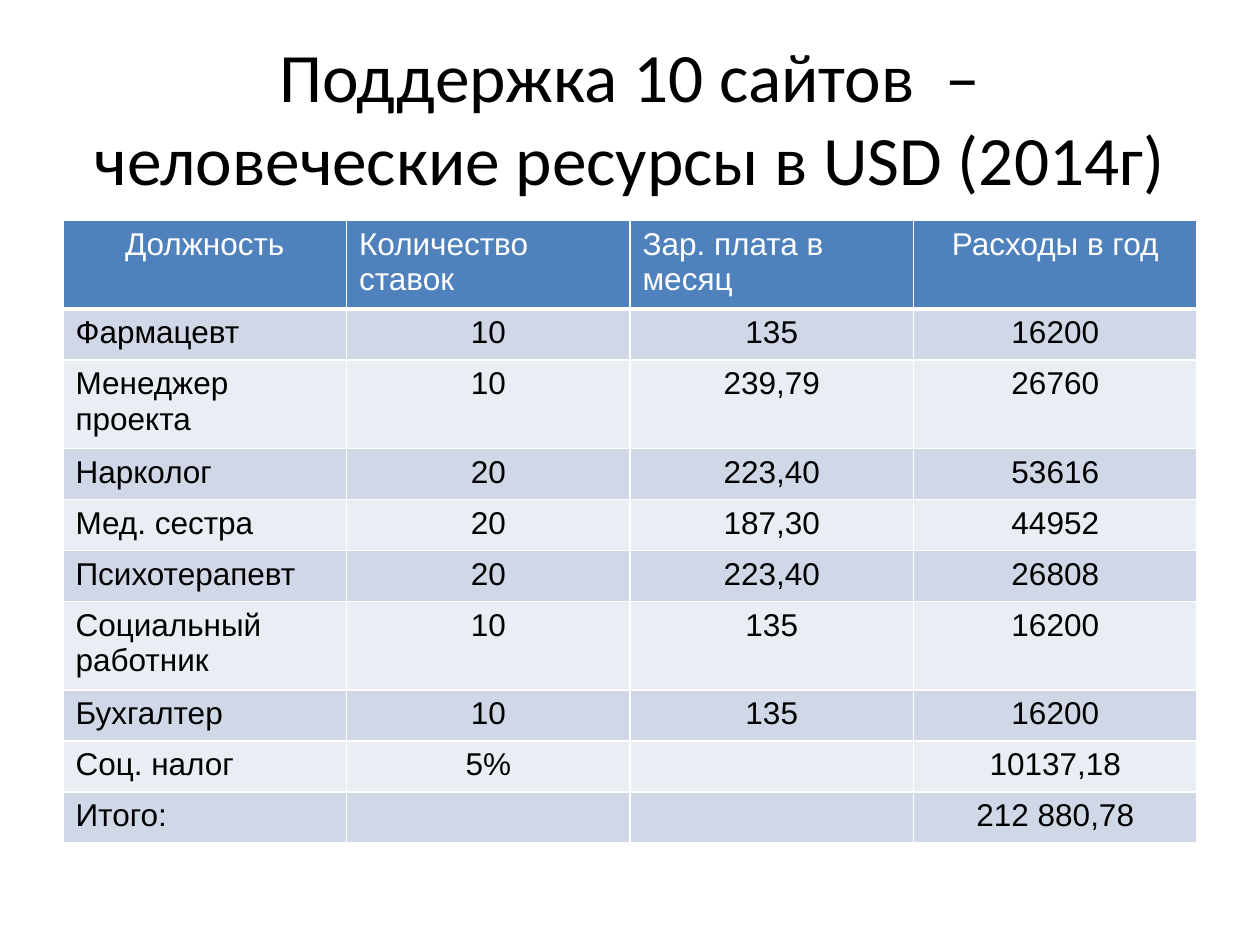
import dataclasses

import lxml.etree
import pptx
import pptx.dml.color
import pptx.enum.text
import pptx.oxml.ns
import pptx.util

Cm = pptx.util.Cm
ALIGN = pptx.enum.text.PP_ALIGN


@dataclasses.dataclass(frozen=True)
class Theme:
    title_font: str = "Calibri"
    table_font: str = "Arial"
    title_size: float = 39.6
    table_size: float = 18
    ink: str = "000000"
    paper: str = "FFFFFF"
    header: str = "4F81BD"
    bands: tuple = ("D0D8E8", "E9EDF4")
    rule: float = 1
    header_rule: float = 3


def rgb(value):
    return pptx.dml.color.RGBColor.from_string(value)


def write(frame, text, *, font, size, color, align=ALIGN.LEFT):
    paragraph = frame.paragraphs[0]
    paragraph.alignment = align
    paragraph.font.size = pptx.util.Pt(size)
    if text:
        run = paragraph.add_run()
        run.text = text
        run.font.name = font
        run.font.size = pptx.util.Pt(size)
        run.font.color.rgb = rgb(color)


class SlideBuilder:
    def __init__(self, slide, theme):
        self.slide = slide
        self.theme = theme

    def title(self, text, left, top, width, height):
        frame = self.slide.shapes.add_textbox(left, top, width, height).text_frame
        frame.word_wrap = True
        frame.vertical_anchor = pptx.enum.text.MSO_ANCHOR.MIDDLE
        write(frame, text, font=self.theme.title_font, size=self.theme.title_size,
              color=self.theme.ink, align=ALIGN.CENTER)

    def borders(self, cell, bottom):
        properties = cell._tc.get_or_add_tcPr()
        qn = pptx.oxml.ns.qn
        for place, side in enumerate("LRTB"):
            weight = bottom if side == "B" else self.theme.rule
            line = lxml.etree.Element(qn(f"a:ln{side}"), w=str(pptx.util.Pt(weight)))
            fill = lxml.etree.SubElement(line, qn("a:solidFill"))
            lxml.etree.SubElement(fill, qn("a:srgbClr"), val=self.theme.paper)
            properties.insert(place, line)

    def table(self, rows, centered_headers, left, top, width, row_height):
        theme = self.theme
        table = self.slide.shapes.add_table(
            len(rows), len(rows[0]), left, top, width, row_height * len(rows)).table
        for row in table.rows:
            row.height = row_height
        for r, values in enumerate(rows):
            is_header = r == 0
            for c, value in enumerate(values):
                cell = table.cell(r, c)
                cell.fill.solid()
                cell.fill.fore_color.rgb = rgb(
                    theme.header if is_header else theme.bands[(r - 1) % 2])
                self.borders(cell, theme.header_rule if is_header else theme.rule)
                centered = c in centered_headers if is_header else c > 0
                write(cell.text_frame, value, font=theme.table_font,
                      size=theme.table_size,
                      color=theme.paper if is_header else theme.ink,
                      align=ALIGN.CENTER if centered else ALIGN.LEFT)


STAFF_COSTS = [
    ("Должность", "Количество ставок", "Зар. плата в месяц", "Расходы в год"),
    ("Фармацевт", "10", "135", "16200"),
    ("Менеджер проекта", "10", "239,79", "26760"),
    ("Нарколог", "20", "223,40", "53616"),
    ("Мед. сестра", "20", "187,30", "44952"),
    ("Психотерапевт", "20", "223,40", "26808"),
    ("Социальный работник", "10", "135", "16200"),
    ("Бухгалтер", "10", "135", "16200"),
    ("Соц. налог", "5%", "", "10137,18"),
    ("Итого:", "", "", "212 880,78"),
]


def main():
    deck = pptx.Presentation()
    deck.slide_width, deck.slide_height = Cm(25.4), Cm(19.05)
    builder = SlideBuilder(deck.slides.add_slide(deck.slide_layouts[6]), Theme())
    margin, content_width = Cm(1.27), Cm(22.86)

    # Heading
    builder.title("Поддержка 10 сайтов  – человеческие ресурсы в USD (2014г)",
                  margin, Cm(0.76), content_width, Cm(3.18))

    # Staff costs
    builder.table(STAFF_COSTS, (0, 3), margin, Cm(4.45), content_width, Cm(1.03))

    deck.save("out.pptx")


if __name__ == "__main__":
    main()
